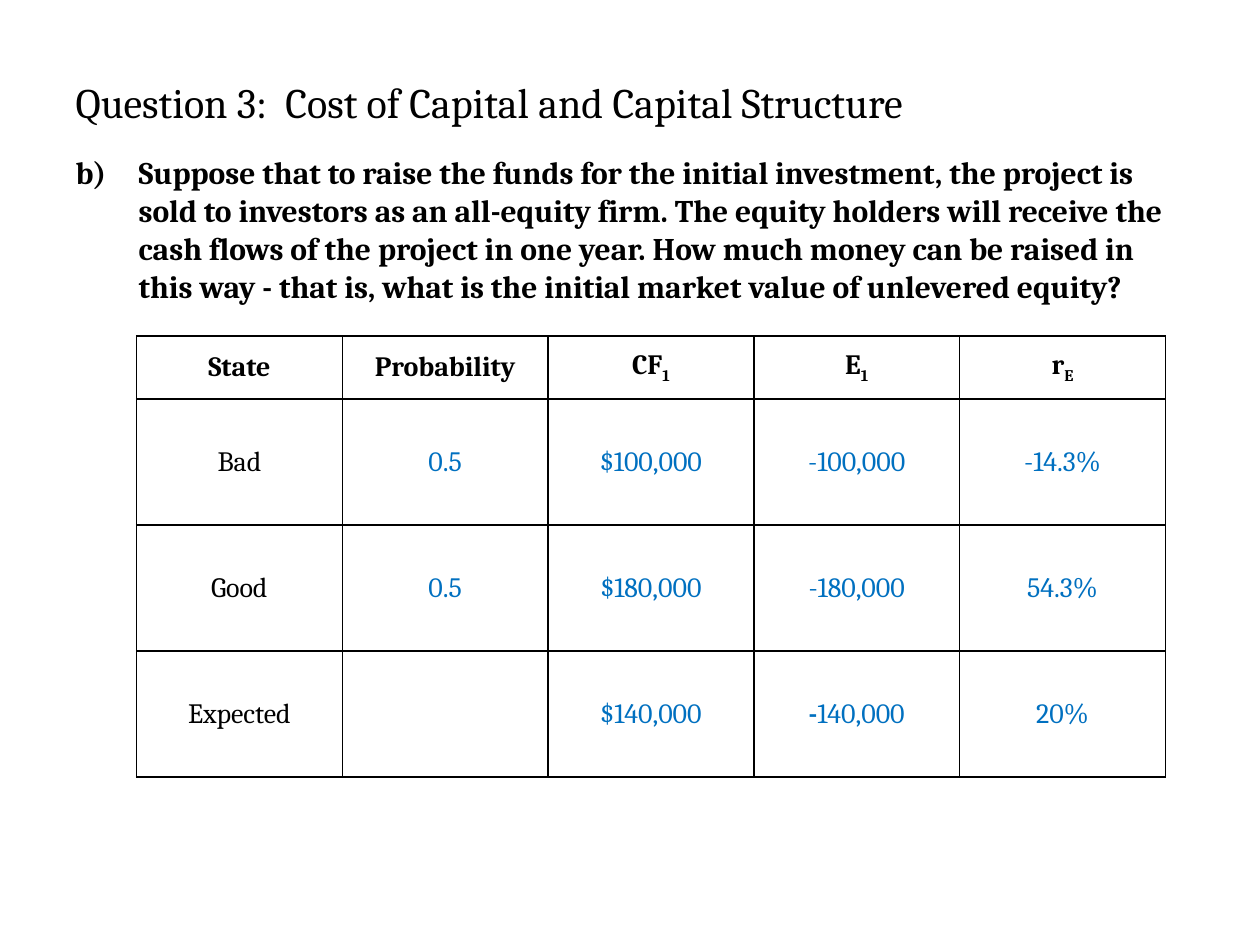
from dataclasses import dataclass

from lxml.etree import SubElement
from pptx import Presentation
from pptx.dml.color import RGBColor
from pptx.enum.text import MSO_ANCHOR as Anchor, PP_ALIGN as Align
from pptx.oxml.ns import qn
from pptx.util import Pt


@dataclass(frozen=True)
class Theme:
    font: str = "Cambria"
    black: RGBColor = RGBColor(0, 0, 0)
    blue: RGBColor = RGBColor(0x00, 0x70, 0xC0)
    title_size: int = 24
    body_size: int = 18
    table_size: int = 16
    border_width: int = 1
    subscript: int = -25000


@dataclass(frozen=True)
class Piece:
    """A stretch of text in one format."""
    text: str
    color: RGBColor
    bold: bool = False
    subscript: bool = False


THEME = Theme()

TITLE = "Question 3:  Cost of Capital and Capital Structure"
QUESTION = (
    "b)\tSuppose that to raise the funds for the initial investment, the project "
    "is sold to investors as an all-equity firm. The equity holders will receive "
    "the cash flows of the project in one year. How much money can be raised in "
    "this way - that is, what is the initial market value of unlevered equity?"
)
# Each heading is a label and its subscript
HEADINGS = [("State", ""), ("Probability", ""), ("CF", "1"), ("E", "1"), ("r", "E")]
STATES = [
    ("Bad", "0.5", "$100,000", "-100,000", "-14.3%"),
    ("Good", "0.5", "$180,000", "-180,000", "54.3%"),
    ("Expected", "", "$140,000", "-140,000", "20%"),
]


def add_piece(paragraph, piece: Piece, size: int) -> None:
    run = paragraph.add_run()
    run.text = piece.text
    run.font.color.rgb = piece.color
    formats = {"name": THEME.font, "size": Pt(size), "bold": piece.bold}
    for name, value in formats.items():
        setattr(run.font, name, value)
    if piece.subscript:
        run._r.get_or_add_rPr().set("baseline", str(THEME.subscript))


def fill_placeholder(shape, box: tuple, anchor: Anchor, piece: Piece, size: int):
    for name, value in zip(("left", "top", "width", "height"), box):
        setattr(shape, name, Pt(value))
    shape.text_frame.vertical_anchor = anchor
    paragraph = shape.text_frame.paragraphs[0]
    paragraph.alignment = Align.LEFT
    add_piece(paragraph, piece, size)
    return paragraph


def set_hanging_indent(paragraph, indent: float) -> None:
    properties = paragraph._p.get_or_add_pPr()
    properties.set("marL", str(Pt(indent)))
    properties.set("indent", str(-Pt(indent)))
    SubElement(properties, qn("a:buNone"))


def set_borders(cell) -> None:
    properties = cell._tc.get_or_add_tcPr()
    for position, side in enumerate(("lnL", "lnR", "lnT", "lnB")):
        line = SubElement(properties, qn(f"a:{side}"), w=str(Pt(THEME.border_width)))
        fill = SubElement(line, qn("a:solidFill"))
        SubElement(fill, qn("a:srgbClr"), val=str(THEME.black))
        properties.insert(position, line)


def fill_cell(cell, pieces: list[Piece]) -> None:
    formats = {
        "margin_left": Pt(5), "margin_right": Pt(5),
        "margin_top": 0, "margin_bottom": 0,
        "vertical_anchor": Anchor.MIDDLE,
    }
    for name, value in formats.items():
        setattr(cell, name, value)
    cell.fill.background()
    set_borders(cell)
    paragraph = cell.text_frame.paragraphs[0]
    paragraph.alignment = Align.CENTER
    paragraph.font.size = Pt(THEME.table_size)
    for piece in pieces:
        if piece.text:
            add_piece(paragraph, piece, THEME.table_size)


def state_pieces(column: int, text: str, expected: bool) -> list[Piece]:
    color = THEME.blue if column else THEME.black
    if expected and text.startswith("-"):  # the expected outlay has a bold minus
        return [Piece("-", color, bold=True), Piece(text[1:], color)]
    return [Piece(text, color)]


def add_state_table(slide) -> None:
    heights = [36, 72, 72, 72]
    frame = slide.shapes.add_table(
        len(heights), len(HEADINGS), Pt(78), Pt(192), Pt(588), Pt(sum(heights)))
    table = frame.table
    table.first_row = table.horz_banding = False
    for row, height in zip(table.rows, heights):
        row.height = Pt(height)
    for column in table.columns:
        column.width = Pt(588 / len(HEADINGS))

    for column, (label, index) in enumerate(HEADINGS):
        fill_cell(table.cell(0, column), [
            Piece(label, THEME.black, bold=True),
            Piece(index, THEME.black, bold=True, subscript=True),
        ])
    for row, values in enumerate(STATES, start=1):
        for column, text in enumerate(values):
            pieces = state_pieces(column, text, row == len(STATES))
            fill_cell(table.cell(row, column), pieces)


def main() -> None:
    presentation = Presentation()
    presentation.slide_width, presentation.slide_height = Pt(720), Pt(540)
    slide = presentation.slides.add_slide(presentation.slide_layouts[1])

    # Title and question
    fill_placeholder(slide.shapes.title, (36, 24, 648, 68), Anchor.MIDDLE,
                     Piece(TITLE, THEME.black), THEME.title_size)
    question = fill_placeholder(slide.placeholders[1], (36, 84, 648, 420), Anchor.TOP,
                                Piece(QUESTION, THEME.black, bold=True), THEME.body_size)
    set_hanging_indent(question, 36)

    # Cash flows and returns by state
    add_state_table(slide)
    presentation.save("out.pptx")


if __name__ == "__main__":
    main()
